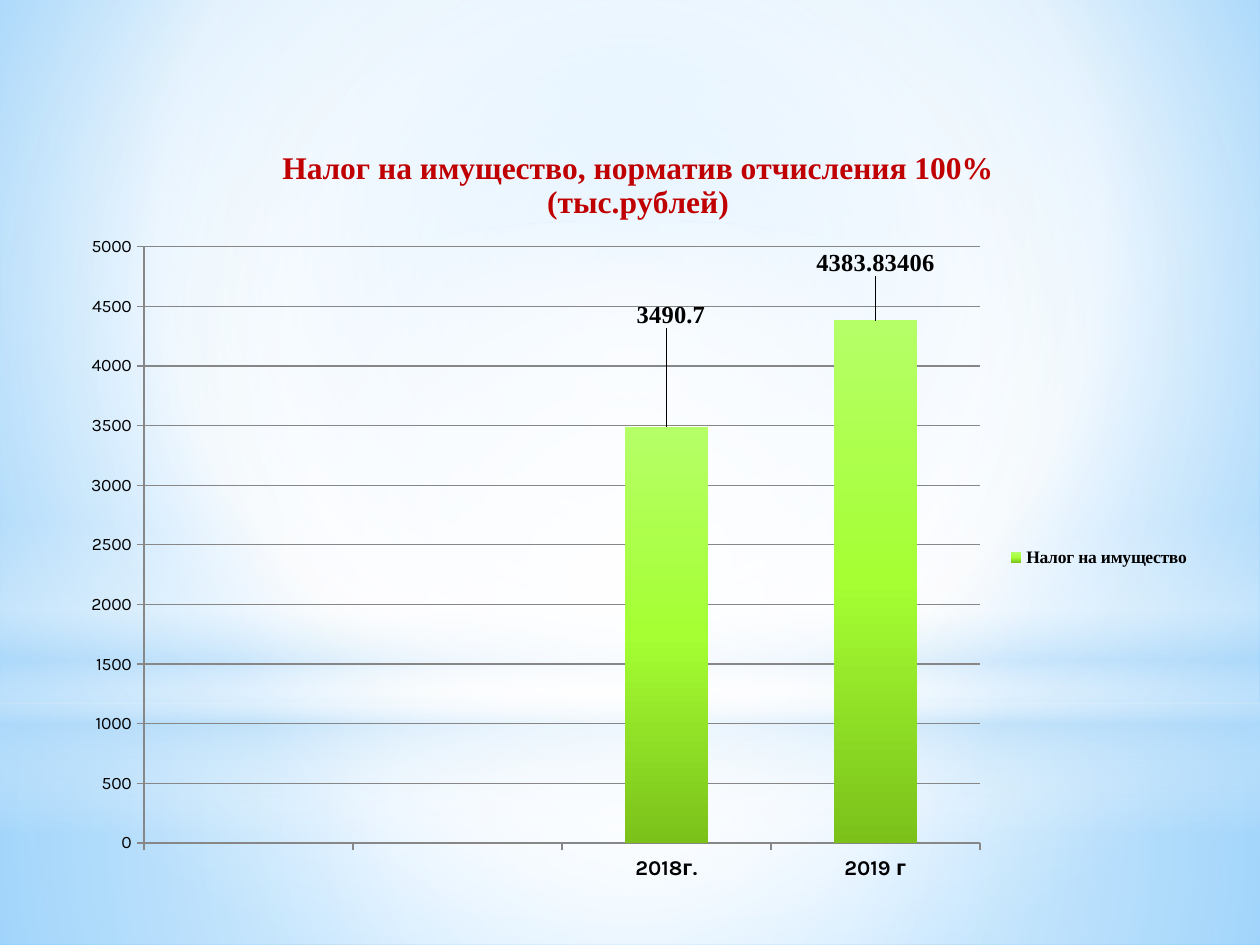
from typing import NamedTuple, Optional

from pptx import Presentation
from pptx.chart.data import CategoryChartData
from pptx.dml.color import RGBColor
from pptx.enum.chart import XL_CHART_TYPE, XL_LABEL_POSITION, XL_LEGEND_POSITION, XL_TICK_MARK
from pptx.enum.shapes import MSO_SHAPE
from pptx.oxml import parse_xml
from pptx.oxml.ns import nsdecls, qn
from pptx.util import Inches, Pt

SERIF = "Times New Roman"
AXIS_GREY = "878787"
CENTRE = (50, 50, 50, 50)


class Stop(NamedTuple):
    position: int
    colour: str
    opacity: int = 100


class Glow(NamedTuple):
    kind: MSO_SHAPE
    top: float
    height: float
    stops: list[Stop]
    focus: Optional[tuple] = CENTRE


class ValueLabel(NamedTuple):
    point: int
    shift_x: float
    shift_y: float


BACKGROUND = [Stop(0, "9ED5FF"), Stop(60, "FFFFFF"), Stop(100, "5BB9FF")]
BAR_STOPS = [Stop(0, "B5FF67"), Stop(50, "A5FF33"), Stop(100, "7BC11A")]
GLOWS = [
    Glow(MSO_SHAPE.RECTANGLE, 5.58, 1.92,
         [Stop(0, "FFFFFF", 91), Stop(37, "FFFFFF", 76), Stop(100, "B4DCFA", 79)]),
    Glow(MSO_SHAPE.RECTANGLE, 0, 5.58,
         [Stop(0, "FFFFFF", 89), Stop(48, "FFFFFF", 62), Stop(100, "B4DCFA", 79)]),
    Glow(MSO_SHAPE.RECTANGLE, 4.12, 2.5,
         [Stop(0, "FFFFFF", 0), Stop(29, "FFFFFF", 30), Stop(45, "B4DCFA", 40),
          Stop(55, "FFFFFF", 26), Stop(65, "B4DCFA", 60), Stop(100, "FFFFFF", 0)], None),
    Glow(MSO_SHAPE.OVAL, 1.75, 5.58, [Stop(0, "FFFFFF"), Stop(56, "FFFFFF", 0)]),
]
VALUE_LABELS = [ValueLabel(2, 0.004, -0.12), ValueLabel(3, 0, -0.05)]


def rgb(colour: str) -> RGBColor:
    return RGBColor.from_string(colour)


def style_font(font, colour: str = "000000", **values) -> None:
    for name, value in values.items():
        setattr(font, name, value)
    font.color.rgb = rgb(colour)


def set_gradient(fill, owner, stops: list[Stop], focus: Optional[tuple] = None) -> None:
    """Fill with a radial gradient around focus, or a vertical one without it."""
    fill.solid()
    marks = "".join(
        f'<a:gs pos="{stop.position * 1000}"><a:srgbClr val="{stop.colour}">'
        f'<a:alpha val="{stop.opacity * 1000}"/></a:srgbClr></a:gs>' for stop in stops)
    if focus:
        sides = " ".join(f'{side}="{share * 1000}"' for side, share in zip("ltrb", focus))
        direction = f'<a:path path="circle"><a:fillToRect {sides}/></a:path>'
    else:
        direction = '<a:lin ang="5400000" scaled="0"/>'
    gradient = parse_xml(f'<a:gradFill {nsdecls("a")} rotWithShape="1">'
                         f"<a:gsLst>{marks}</a:gsLst>{direction}</a:gradFill>")
    solid = next(owner.iter(qn("a:solidFill")))
    solid.getparent().replace(solid, gradient)


def set_layout(owner, previous: Optional[str], **values) -> None:
    """Place a chart part by fractions of the chart, after the child named previous."""
    for layout in owner.findall(qn("c:layout")):
        owner.remove(layout)
    settings = "".join(f'<c:{name} val="{value}"/>' for name, value in values.items())
    layout = parse_xml(f'<c:layout {nsdecls("c")}><c:manualLayout>{settings}'
                       "</c:manualLayout></c:layout>")
    owner.insert(owner.index(owner.find(qn(previous))) + 1 if previous else 0, layout)


def add_glow(page, glow: Glow) -> None:
    shape = page.shapes.add_shape(glow.kind, 0, Inches(glow.top), Inches(10), Inches(glow.height))
    shape.shadow.inherit = False
    shape.line.fill.background()
    set_gradient(shape.fill, shape._element, glow.stops, glow.focus)


def add_tax_chart(page) -> None:
    data = CategoryChartData()
    data.categories = ["", "", "2018г.", "2019 г"]
    data.add_series("Налог на имущество", [None, None, 3490.7, 4383.83406])
    chart = page.shapes.add_chart(XL_CHART_TYPE.COLUMN_CLUSTERED, Inches(0.55), Inches(0.94),
                                  Inches(8.98), Inches(6.17), data).chart
    style_font(chart.font, name="Karla", size=Pt(10))
    chart.font._element.getparent().getparent().addprevious(parse_xml(
        f'<c:spPr {nsdecls("c", "a")}><a:solidFill><a:srgbClr val="B9CDE5"/></a:solidFill>'
        "<a:ln><a:noFill/></a:ln></c:spPr>"))

    # Title
    title = chart.chart_title
    title.text_frame.text = "Налог на имущество, норматив отчисления 100%\n(тыс.рублей)"
    for para in title.text_frame.paragraphs:
        for span in para.runs:
            style_font(span.font, "C00000", name=SERIF, size=Pt(18), bold=True)
    set_layout(title._element, "c:tx", xMode="edge", yMode="edge", x=0.185, y=0.035)

    # Axes
    for axis in (chart.category_axis, chart.value_axis):
        axis.major_tick_mark = XL_TICK_MARK.OUTSIDE
        axis.minor_tick_mark = XL_TICK_MARK.NONE
        axis.format.line.color.rgb = rgb(AXIS_GREY)
    style_font(chart.category_axis.tick_labels.font, name="Karla", size=Pt(12), bold=True)
    scale = chart.value_axis
    scale.minimum_scale, scale.maximum_scale, scale.major_unit = 0, 5000, 500
    scale.has_major_gridlines = True
    scale.major_gridlines.format.line.color.rgb = rgb(AXIS_GREY)

    # Columns and their values
    plot = chart.plots[0]
    plot.vary_by_categories = False
    plot.gap_width = 150
    series = plot.series[0]
    set_gradient(series.format.fill, series._element, BAR_STOPS)
    label_font = {"name": SERIF, "size": Pt(14), "bold": True}
    series.data_labels.show_value = True
    style_font(series.data_labels.font, **label_font)
    for value_label in VALUE_LABELS:
        label = series.points[value_label.point].data_label
        style_font(label.font, **label_font)
        label.position = XL_LABEL_POSITION.OUTSIDE_END
    for element, value_label in zip(series._element.iter(qn("c:dLbl")), VALUE_LABELS):
        set_layout(element, "c:idx", x=value_label.shift_x, y=value_label.shift_y)

    # Legend and plot area
    chart.has_legend = True
    legend = chart.legend
    legend.position = XL_LEGEND_POSITION.RIGHT
    legend.include_in_layout = False
    style_font(legend.font, name=SERIF, size=Pt(10), bold=True)
    set_layout(legend._element, "c:legendPos", xMode="edge", yMode="edge",
               x=0.825, y=0.54, w=0.17, h=0.05)
    plot_area = next(chart._chartSpace.iter(qn("c:plotArea")))
    set_layout(plot_area, None, layoutTarget="inner", xMode="edge", yMode="edge",
               x=0.066, y=0.165, w=0.739, h=0.767)


def main() -> None:
    deck = Presentation()
    deck.slide_width, deck.slide_height = Inches(10), Inches(7.5)
    page = deck.slides.add_slide(deck.slide_layouts[6])
    set_gradient(page.background.fill, page._element, BACKGROUND, (20, 10, 20, 60))
    for glow in GLOWS:
        add_glow(page, glow)
    add_tax_chart(page)
    deck.save("out.pptx")


if __name__ == "__main__":
    main()
